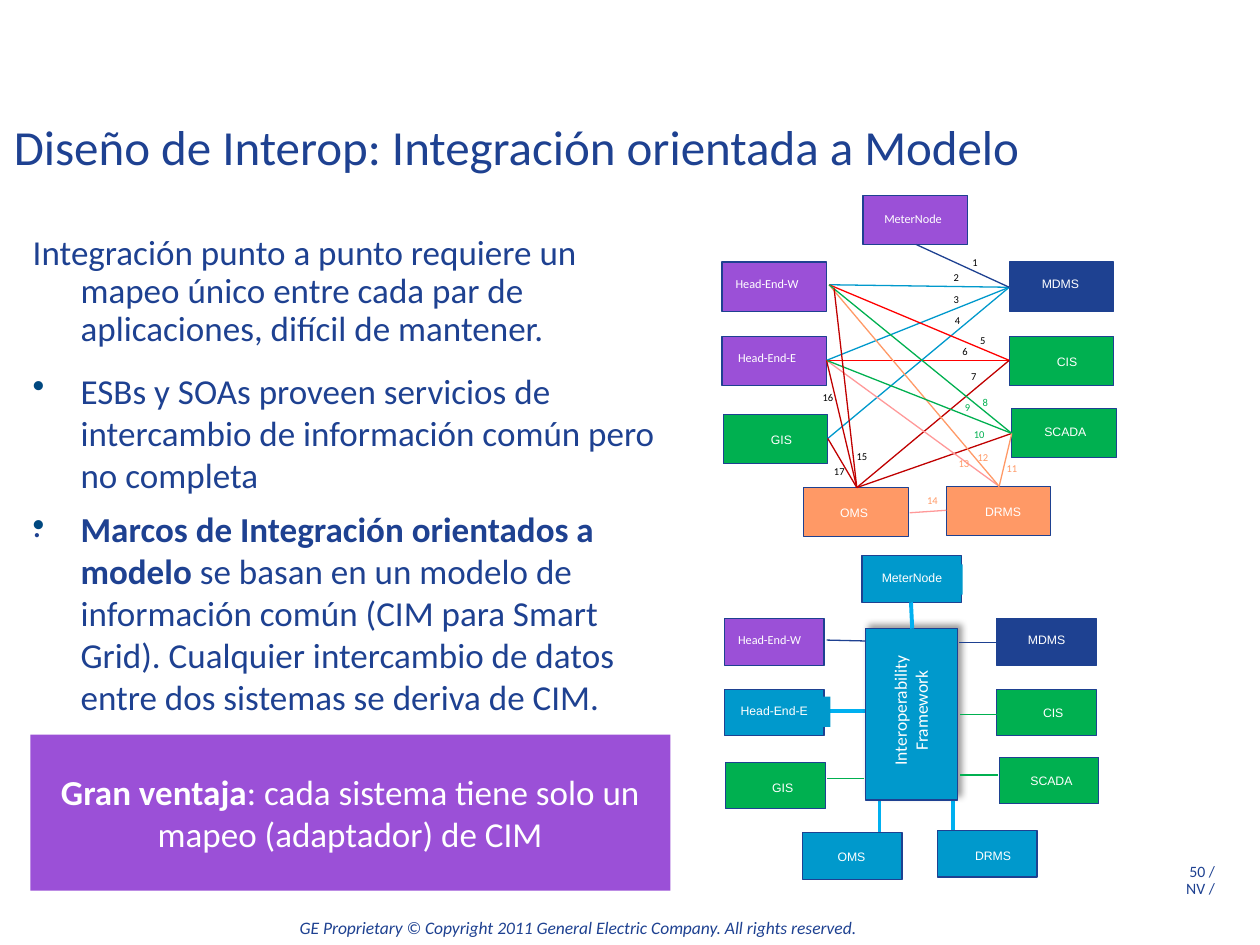
from lxml.etree import SubElement
from pptx import Presentation
from pptx.dml.color import RGBColor
from pptx.enum.shapes import MSO_CONNECTOR, MSO_SHAPE
from pptx.enum.text import MSO_ANCHOR, MSO_AUTO_SIZE, PP_ALIGN
from pptx.oxml.ns import qn
from pptx.util import Inches, Pt

NAVY = RGBColor(0x1E, 0x41, 0x91)
TEAL = RGBColor(0x00, 0x48, 0x80)
PURPLE = RGBColor(0x9B, 0x50, 0xD7)
GREEN = RGBColor(0x00, 0xB0, 0x50)
ORANGE = RGBColor(0xFF, 0x99, 0x66)
PINK = RGBColor(0xFF, 0x99, 0x99)
BLUE = RGBColor(0x00, 0x99, 0xCC)
SKY = RGBColor(0x00, 0xB0, 0xF0)
RED = RGBColor(0xFF, 0x00, 0x00)
DARK_RED = RGBColor(0xC0, 0x00, 0x00)
BLACK = RGBColor(0, 0, 0)
WHITE = RGBColor(0xFF, 0xFF, 0xFF)

TITLE = "Diseño de Interop: Integración orientada a Modelo"
INTRO = ("Integración punto a punto requiere un mapeo único entre cada par de "
         "aplicaciones, difícil de mantener.")
SERVICES = ("ESBs y SOAs proveen servicios de intercambio de información común "
            "pero no completa")
FRAMEWORKS = [
    ("Marcos de Integración orientados a modelo ", True),
    ("se basan en un modelo de información común (CIM para Smart Grid). "
     "Cualquier intercambio de datos entre dos sistemas se deriva de CIM.", False),
]
BENEFIT = [("Gran ventaja", True),
           (": cada sistema tiene solo un mapeo (adaptador) de CIM", False)]
COPYRIGHT = ("GE Proprietary © Copyright 2011 General Electric Company. "
             "All rights reserved.")
PAGE_LINES = ["50 /", "NV /"]

MESH_SIZE = (0.83, 0.39)
MESH_NODES = [
    ("Head-End-E", 5.73, 2.67, PURPLE, "Calibri", (0.03, 0.06, 0.77)),
    ("Head-End-W", 5.73, 2.08, PURPLE, "Calibri", (0.01, 0.06, 0.81)),
    ("MDMS", 8.01, 2.08, NAVY, "Arial", (0.16, 0.06, 0.55)),
    ("MeterNode", 6.85, 1.55, PURPLE, "Calibri", (0.07, 0.08, 0.72)),
    ("CIS", 8.01, 2.67, GREEN, "Arial", (0.28, 0.09, 0.40)),
    ("GIS", 5.74, 3.29, GREEN, "Arial", (0.28, 0.09, 0.41)),
    ("SCADA", 8.03, 3.24, GREEN, "Arial", (0.16, 0.08, 0.59)),
    ("OMS", 6.38, 3.87, ORANGE, "Arial", (0.19, 0.09, 0.47)),
    ("DRMS", 7.51, 3.86, ORANGE, "Arial", (0.21, 0.09, 0.54)),
]
PORTS = {
    "Meter": (7.27, 1.94), "West": (6.58, 2.26), "West corner": (6.62, 2.29),
    "East": (6.56, 2.86), "GIS": (6.57, 3.48), "MDMS": (8.01, 2.28),
    "CIS": (8.01, 2.86), "SCADA": (8.03, 3.44), "OMS": (6.80, 3.87),
    "OMS side": (7.22, 4.07), "DRMS": (7.93, 3.86), "DRMS side": (7.51, 4.05),
}
MESH_LINKS = [
    ("MDMS", "East", BLUE), ("MDMS", "West", BLUE), ("MDMS", "GIS", BLUE),
    ("Meter", "MDMS", NAVY), ("CIS", "East", RED), ("CIS", "West", RED),
    ("CIS", "OMS", DARK_RED), ("OMS", "GIS", DARK_RED),
    ("OMS", "SCADA", DARK_RED), ("DRMS", "East", PINK),
    ("DRMS", "West", ORANGE), ("SCADA", "East", GREEN),
    ("SCADA", "West", GREEN), ("DRMS", "SCADA", ORANGE),
    ("OMS", "East", DARK_RED), ("OMS", "West corner", DARK_RED),
    ("DRMS side", "OMS side", PINK),
]
LINK_NUMBERS = [
    (1, 7.62, 1.98, BLACK), (2, 7.47, 2.10, BLACK), (3, 7.47, 2.28, BLACK),
    (4, 7.48, 2.44, BLACK), (5, 7.68, 2.60, BLACK), (6, 7.54, 2.69, BLACK),
    (7, 7.61, 2.89, BLACK), (8, 7.70, 3.09, GREEN), (9, 7.56, 3.13, GREEN),
    (10, 7.63, 3.35, GREEN), (11, 7.89, 3.62, ORANGE),
    (12, 7.66, 3.53, ORANGE), (13, 7.51, 3.58, ORANGE),
    (14, 7.26, 3.87, ORANGE), (15, 6.70, 3.52, BLACK),
    (17, 6.52, 3.64, BLACK), (16, 6.43, 3.05, BLACK),
]

HUB_SIZE = (0.79, 0.37)
HUB_NODES = [
    ("Head-End-E", 5.75, 5.47, BLUE, "Arial", (0.03, 0.06, 0.81)),
    ("Head-End-W", 5.75, 4.91, PURPLE, "Calibri", (0.01, 0.06, 0.81)),
    ("MDMS", 7.91, 4.91, NAVY, "Arial", (0.15, 0.06, 0.55)),
    ("MeterNode", 6.84, 4.41, BLUE, "Arial", (0.06, 0.07, 0.74)),
    ("CIS", 7.91, 5.47, GREEN, "Arial", (0.27, 0.08, 0.40)),
    ("GIS", 5.76, 6.05, GREEN, "Arial", (0.27, 0.09, 0.41)),
    ("SCADA", 7.93, 6.01, GREEN, "Arial", (0.15, 0.08, 0.59)),
    ("OMS", 6.37, 6.61, BLUE, "Arial", (0.18, 0.08, 0.47)),
    ("DRMS", 7.44, 6.59, BLUE, "Arial", (0.20, 0.09, 0.54)),
]
LINKS_BEHIND = [
    ((7.56, 6.33), (7.56, 6.60), SKY, 2.25),
    ((6.98, 6.34), (6.98, 6.60), SKY, 2.25),
    ((6.56, 5.08), (6.98, 5.09), NAVY, 0.75),
    ((6.56, 5.64), (6.98, 5.64), SKY, 2.25),
]
LINKS_FRONT = [
    ((7.23, 4.78), (7.24, 4.99), SKY, 2.25),
    ((7.91, 5.10), (7.61, 5.10), NAVY, 0.75),
    ((7.92, 5.67), (7.62, 5.67), GREEN, 0.75),
    ((7.92, 6.15), (7.62, 6.15), GREEN, 0.75),
    ((6.86, 6.18), (6.56, 6.18), GREEN, 0.75),
]


def add_run(paragraph, text, size, color, font="Calibri", bold=False, italic=False):
    run = paragraph.add_run()
    run.text = text
    run.font.size, run.font.name = Pt(size), font
    run.font.bold, run.font.italic = bold, italic
    run.font.color.rgb = color


def clear_margins(frame):
    frame.margin_left = frame.margin_right = 0
    frame.margin_top = frame.margin_bottom = 0


def add_text(shapes, box, wrap=True):
    shape = shapes.add_textbox(*map(Inches, box))
    shape.text_frame.word_wrap = wrap
    shape.text_frame.auto_size = MSO_AUTO_SIZE.SHAPE_TO_FIT_TEXT
    return shape, shape.text_frame.paragraphs[0]


def add_body(slide, box, runs, bullet=True):
    shape, paragraph = add_text(slide.shapes, box)
    shape.text_frame.auto_size = MSO_AUTO_SIZE.NONE
    clear_margins(shape.text_frame)
    properties = paragraph._p.get_or_add_pPr()
    properties.set("marL", str(Inches(0.38)))
    properties.set("indent", str(Inches(-0.38)))
    if bullet:
        color = SubElement(properties, qn("a:buClr"))
        SubElement(color, qn("a:srgbClr"), val=str(TEAL))
        SubElement(properties, qn("a:buChar"), char="•")
    for text, bold in runs:
        add_run(paragraph, text, 20, NAVY, bold=bold)
    return shape.text_frame


def add_rect(shapes, box, fill, outlined=True):
    shape = shapes.add_shape(MSO_SHAPE.RECTANGLE, *map(Inches, box))
    shape.shadow.inherit = False
    shape.fill.solid()
    shape.fill.fore_color.rgb = fill
    if outlined:
        shape.line.color.rgb = NAVY
        shape.line.width = Pt(0.75)
    else:
        shape.line.fill.background()
    return shape


def add_link(shapes, start, end, color, width=0.75):
    ends = map(Inches, start + end)
    line = shapes.add_connector(MSO_CONNECTOR.STRAIGHT, *ends)
    line.line.color.rgb = color
    line.line.width = Pt(width)
    SubElement(line._element.spPr, qn("a:effectLst"))


def add_nodes(shapes, nodes, size):
    for text, left, top, fill, font, (dx, dy, width) in nodes:
        add_rect(shapes, (left, top, *size), fill)
        label, paragraph = add_text(shapes, (left + dx, top + dy, width, 0.24), False)
        if font == "Arial":
            label.fill.solid()
            label.fill.fore_color.rgb = fill
        add_run(paragraph, text, 7, WHITE, font)


def add_mesh(slide):
    shapes = slide.shapes.add_group_shape().shapes
    add_nodes(shapes, MESH_NODES, MESH_SIZE)
    for start, end, color in MESH_LINKS:
        add_link(shapes, PORTS[start], PORTS[end], color)
    for number, left, top, color in LINK_NUMBERS:
        width = 0.27 if number < 10 else 0.32
        paragraph = add_text(shapes, (left, top, width, 0.22), False)[1]
        add_run(paragraph, str(number), 6, color)


def add_hub(slide):
    shapes = slide.shapes.add_group_shape().shapes
    for link in LINKS_BEHIND:
        add_link(shapes, *link)
    add_nodes(shapes, HUB_NODES, HUB_SIZE)
    hub = add_rect(shapes, (6.87, 4.99, 0.73, 1.36), BLUE)
    shadow = SubElement(hub._element.spPr.find(qn("a:effectLst")), qn("a:outerShdw"),
                        blurRad=str(Pt(4)), dist=str(Pt(3)), dir="18900000")
    color = SubElement(shadow, qn("a:srgbClr"), val=str(BLACK))
    SubElement(color, qn("a:alpha"), val="40000")
    for link in LINKS_FRONT:
        add_link(shapes, *link)
    label, paragraph = add_text(shapes, (6.63, 5.4, 1.24, 0.48))
    label.rotation = 270
    paragraph.alignment = PP_ALIGN.CENTER
    add_run(paragraph, "Interoperability Framework", 10, WHITE)


def main():
    presentation = Presentation()
    presentation.slide_width, presentation.slide_height = Inches(10), Inches(7.5)
    slide = presentation.slides.add_slide(presentation.slide_layouts[5])

    title = slide.shapes.title
    title.left, title.top, title.width, title.height = map(Inches, (0.11, 0.98, 9.53, 0.6))
    frame = title.text_frame
    clear_margins(frame)
    frame.word_wrap, frame.auto_size = True, MSO_AUTO_SIZE.NONE
    frame.vertical_anchor = MSO_ANCHOR.TOP
    frame.paragraphs[0].alignment = PP_ALIGN.LEFT
    frame.paragraphs[0].line_spacing = 0.9
    add_run(frame.paragraphs[0], TITLE, 28, NAVY)

    page_frame = add_text(slide.shapes, (7.05, 6.81, 2.69, 0.5))[0].text_frame
    page_frame.add_paragraph()
    for paragraph, text in zip(page_frame.paragraphs, PAGE_LINES):
        paragraph.alignment, paragraph.line_spacing = PP_ALIGN.RIGHT, 0.9
        add_run(paragraph, text, 9, NAVY)
    footer = add_text(slide.shapes, (2.28, 7.23, 4.84, 0.27), False)[1]
    add_run(footer, COPYRIGHT, 10, NAVY, italic=True)

    intro = add_body(slide, (0.26, 1.87, 5.08, 1.12), [(INTRO, False)], False)
    intro.paragraphs[0].line_spacing = 0.9
    add_mesh(slide)
    add_hub(slide)
    add_body(slide, (0.26, 4.03, 5.08, 1.84), FRAMEWORKS)

    banner = add_rect(slide.shapes, (0.24, 5.83, 5.08, 1.24), PURPLE, False)
    clear_margins(banner.text_frame)
    banner.text_frame.word_wrap = True
    banner.text_frame.paragraphs[0].alignment = PP_ALIGN.CENTER
    for text, bold in BENEFIT:
        add_run(banner.text_frame.paragraphs[0], text, 20, WHITE, bold=bold)

    services = add_body(slide, (0.26, 2.93, 5.08, 1.14), [(SERVICES, False)])
    closing = services.add_paragraph()
    closing.space_before = Pt(4)
    add_run(closing, ".", 20, NAVY)
    presentation.save("out.pptx")


if __name__ == "__main__":
    main()
